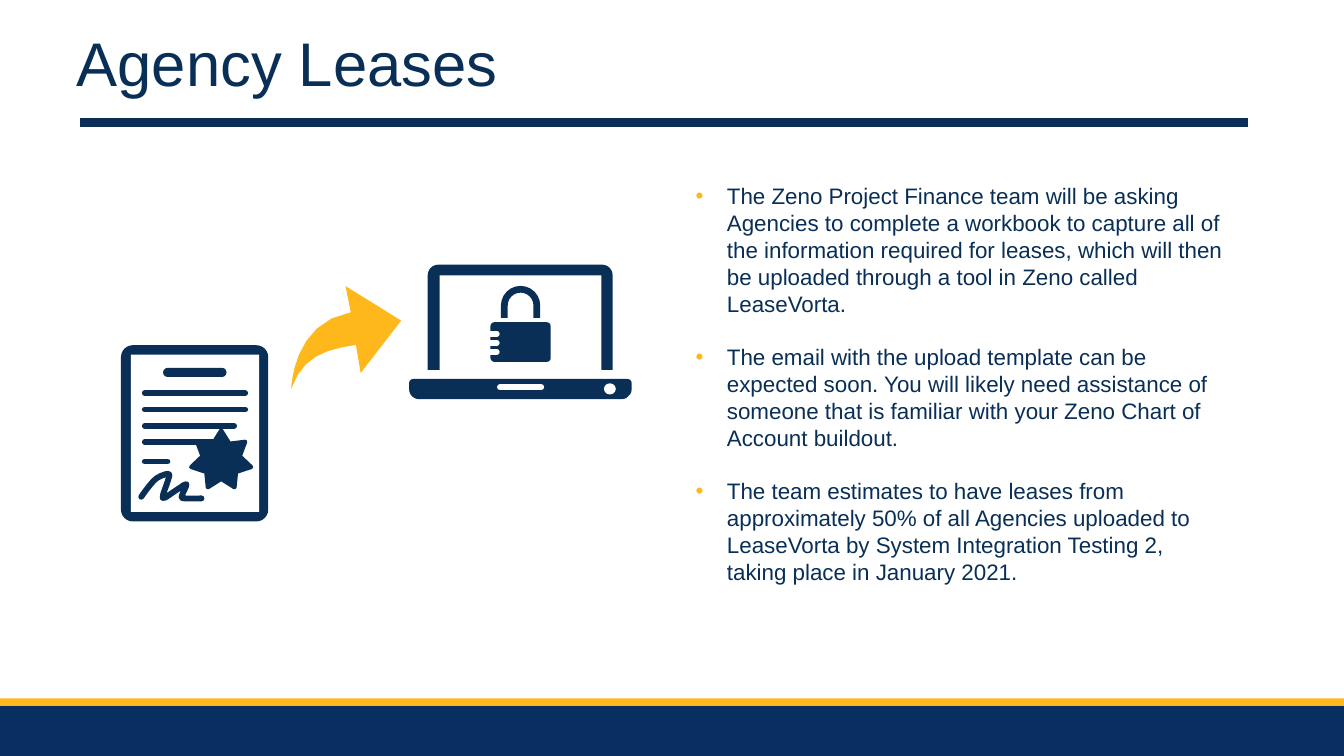
from math import cos, pi, sin

from lxml import etree
from pptx import Presentation
from pptx.dml.color import RGBColor
from pptx.enum.shapes import MSO_CONNECTOR, MSO_SHAPE
from pptx.enum.text import MSO_ANCHOR
from pptx.oxml.ns import qn
from pptx.util import Cm, Pt

NAVY = RGBColor(0x09, 0x2F, 0x57)
FOOTER_NAVY = RGBColor(0x09, 0x2F, 0x61)
GOLD = RGBColor(0xFF, 0xB8, 0x1C)
WHITE = RGBColor(0xFF, 0xFF, 0xFF)

BULLETS = [
    "The Zeno Project Finance team will be asking Agencies to complete a "
    "workbook to capture all of the information required for leases, which "
    "will then be uploaded through a tool in Zeno called LeaseVorta.",
    "The email with the upload template can be expected soon. You will likely "
    "need assistance of someone that is familiar with your Zeno Chart of "
    "Account buildout.",
    "The team estimates to have leases from approximately 50% of all Agencies "
    "uploaded to LeaseVorta by System Integration Testing 2, taking place in "
    "January 2021.",
]


def add_block(s, kind, x, y, w, h, color, *adjustments):
    sp = s.shapes.add_shape(kind, Cm(x), Cm(y), Cm(w), Cm(h))
    for i, value in enumerate(adjustments):
        sp.adjustments[i] = value
    sp.shadow.inherit = False
    sp.fill.solid()
    sp.fill.fore_color.rgb = color
    sp.line.fill.background()
    return sp


def add_outline(s, contours, close):
    # Points are in cm, kept to a thousandth
    grids = [[(x * 1000, y * 1000) for x, y in points] for points in contours]
    builder = s.shapes.build_freeform(*grids[0][0], scale=Cm(1) / 1000)
    for i, grid in enumerate(grids):
        if i:
            builder.move_to(*grid[0])
        builder.add_line_segments(grid[1:], close=close)
    sp = builder.convert_to_shape()
    sp.shadow.inherit = False
    return sp


def add_strokes(s, contours, width, color, cap):
    sp = add_outline(s, contours, False)
    sp.fill.background()
    sp.line.color.rgb = color
    sp.line.width = Pt(width)
    sp._element.spPr.find(qn("a:ln")).set("cap", cap)


def bezier(a, b, c, d, steps):
    points = []
    for i in range(steps + 1):
        t = i / steps
        u = 1 - t
        weights = (u ** 3, 3 * u * u * t, 3 * u * t * t, t ** 3)
        points.append(tuple(sum(k * p[axis] for k, p in zip(weights, (a, b, c, d)))
                            for axis in (0, 1)))
    return points


def smooth(knots):
    # Curve through all the knots
    ends = [knots[0], *knots, knots[-1]]
    points = [knots[0]]
    for before, a, b, after in zip(ends, ends[1:], ends[2:], ends[3:]):
        c1 = tuple(a[i] + (b[i] - before[i]) / 6 for i in (0, 1))
        c2 = tuple(b[i] - (after[i] - a[i]) / 6 for i in (0, 1))
        points += bezier(a, c1, c2, b, 3)[1:]
    return points


def add_text(s, x, y, w, h, paragraphs, size):
    tf = s.shapes.add_textbox(Cm(x), Cm(y), Cm(w), Cm(h)).text_frame
    tf.word_wrap = True
    for i, text in enumerate(paragraphs):
        p = tf.paragraphs[0] if i == 0 else tf.add_paragraph()
        p.text = text
        for r in p.runs:
            r.font.name = "Arial"
            r.font.size = Pt(size)
            r.font.color.rgb = NAVY
    return tf


def add_bullet(p):
    pPr = p._p.get_or_add_pPr()
    pPr.set("marL", str(Cm(0.79)))
    pPr.set("indent", str(-Cm(0.79)))
    color = etree.SubElement(pPr, qn("a:buClr"))
    etree.SubElement(color, qn("a:srgbClr")).set("val", str(GOLD))
    etree.SubElement(pPr, qn("a:buFont")).set("typeface", "Arial")
    etree.SubElement(pPr, qn("a:buChar")).set("char", "•")


def add_contract(s):
    add_block(s, MSO_SHAPE.ROUNDED_RECTANGLE, 3.05, 8.7, 3.71, 4.44, NAVY, 0.08)
    add_block(s, MSO_SHAPE.RECTANGLE, 3.3, 8.94, 3.23, 3.96, WHITE)
    add_block(s, MSO_SHAPE.ROUNDED_RECTANGLE, 4.11, 9.27, 1.6, 0.23, NAVY, 0.5)
    # Four lines of text, a short one and the signature
    lines = [[(3.65, 9.91 + i * 0.41), (right, 9.91 + i * 0.41)]
             for i, right in enumerate((6.18, 6.18, 5.9, 5.4))]
    lines.append([(3.65, 11.63), (4.22, 11.63)])
    lines.append(smooth([
        (3.56, 12.52), (3.72, 12.3), (3.95, 12.05), (4.25, 11.94), (4.23, 12.12),
        (4.1, 12.55), (4.4, 12.38), (4.7, 12.2), (4.58, 12.5), (4.66, 12.56),
        (5.08, 12.56)]))
    add_strokes(s, lines, 4.2, NAVY, "rnd")
    # Seal with softened tips
    seal = add_block(s, MSO_SHAPE.STAR_7_POINT, 4.82, 10.85, 1.51, 1.43, NAVY, 0.31)
    seal.line.color.rgb = NAVY
    seal.line.width = Pt(3)


def add_arrow(s):
    tail = (7.34, 9.8)
    points = [(9.09, 9.4), (10.11, 8.08), (8.71, 7.21)]
    points += bezier((8.84, 7.87), (7.37, 8.13), tail, tail, 8)
    points += bezier(tail, (7.62, 8.99), (8.18, 8.81), (8.97, 8.69), 6)[1:]
    arrow = add_outline(s, [points], True)
    arrow.fill.solid()
    arrow.fill.fore_color.rgb = GOLD
    arrow.line.fill.background()


def add_laptop(s):
    # Screen
    add_block(s, MSO_SHAPE.ROUND_2_SAME_RECTANGLE, 10.78, 6.67, 4.66, 2.65, NAVY, 0.1)
    add_block(s, MSO_SHAPE.RECTANGLE, 11.08, 6.94, 4.08, 2.39, WHITE)
    # Base
    add_block(s, MSO_SHAPE.ROUND_2_SAME_RECTANGLE, 10.31, 9.55, 5.61, 0.51, NAVY, 0.2, 0.5)
    add_block(s, MSO_SHAPE.OVAL, 15.22, 9.66, 0.3, 0.28, WHITE)
    # Padlock
    add_block(s, MSO_SHAPE.ROUNDED_RECTANGLE, 12.36, 8.12, 1.52, 1, NAVY, 0.1)
    x, y, radius, bottom = 13.12, 7.7, 0.41, 8.01
    arc = [(x - radius * cos(pi * i / 12), y - radius * sin(pi * i / 12)) for i in range(13)]
    add_strokes(s, [[(x - radius, bottom), *arc, (x + radius, bottom)]], 4.8, NAVY, "flat")
    # Slot in the base and teeth of the padlock
    slots = [[(12.6, 9.76), (13.64, 9.76)]]
    slots += [[(12.36, 8.41 + i * 0.23), (12.52, 8.41 + i * 0.23)] for i in range(3)]
    add_strokes(s, slots, 4.2, WHITE, "rnd")


def main():
    prs = Presentation()
    prs.slide_width, prs.slide_height = Cm(33.87), Cm(19.05)
    s = prs.slides.add_slide(prs.slide_layouts[6])

    # Footer bands
    add_block(s, MSO_SHAPE.RECTANGLE, 0, 17.78, 33.87, 1.27, FOOTER_NAVY)
    add_block(s, MSO_SHAPE.RECTANGLE, 0, 17.6, 33.87, 0.18, GOLD)

    # Bullets
    body = add_text(s, 17.28, 4.47, 13.82, 10.52, BULLETS, 16)
    for i, p in enumerate(body.paragraphs):
        if i:
            p.space_before = Pt(19)
        add_bullet(p)

    # Illustration
    add_contract(s)
    add_arrow(s)
    add_laptop(s)

    # Title and rule
    title = add_text(s, 1.68, 0.49, 29.74, 2.13, ["Agency Leases"], 44)
    title.vertical_anchor = MSO_ANCHOR.BOTTOM
    rule = s.shapes.add_connector(MSO_CONNECTOR.STRAIGHT, Cm(2.01), Cm(3.09), Cm(31.45), Cm(3.09))
    rule.line.color.rgb = NAVY
    rule.line.width = Pt(6)
    etree.SubElement(rule._element.spPr, qn("a:effectLst"))

    prs.save("out.pptx")


if __name__ == "__main__":
    main()
